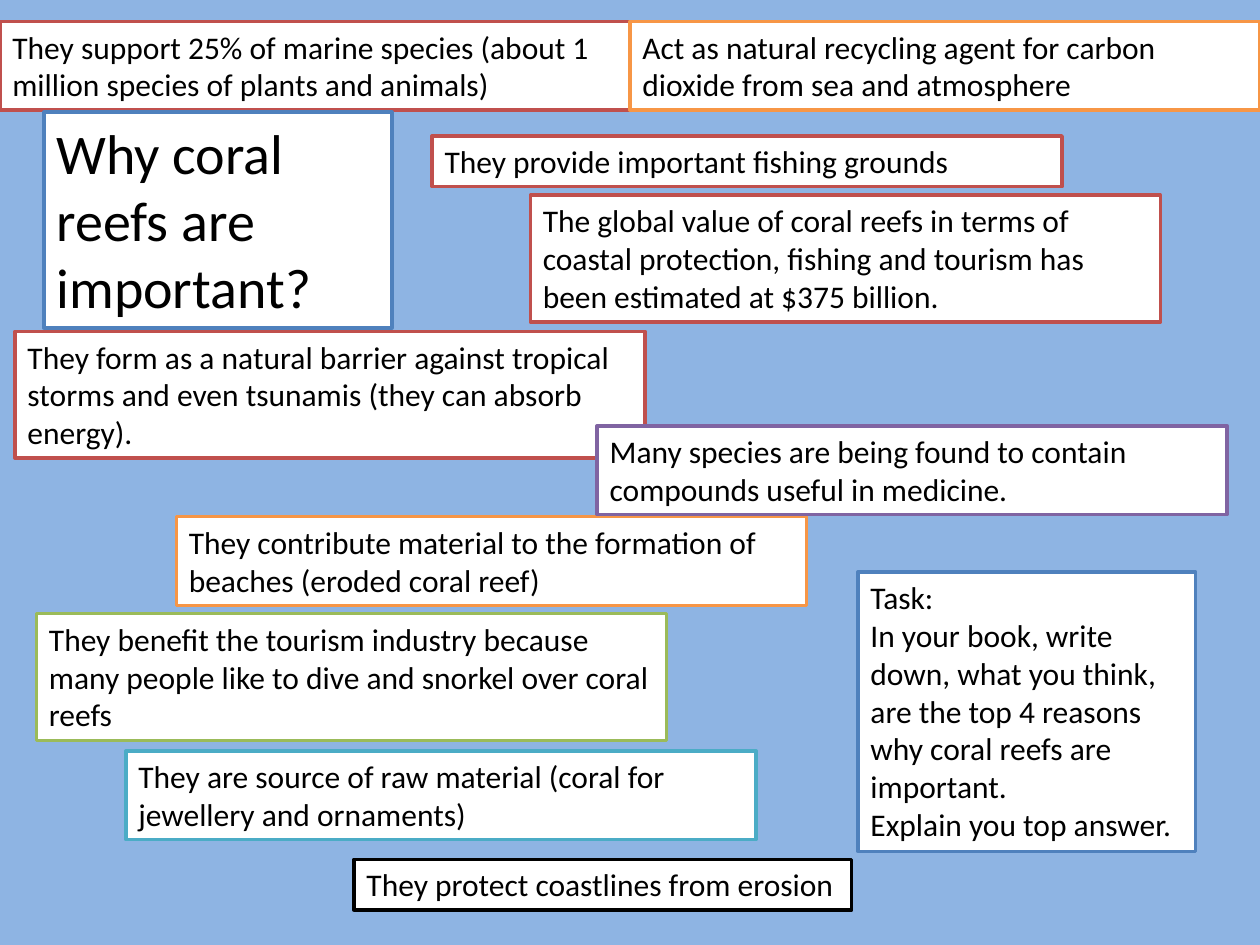
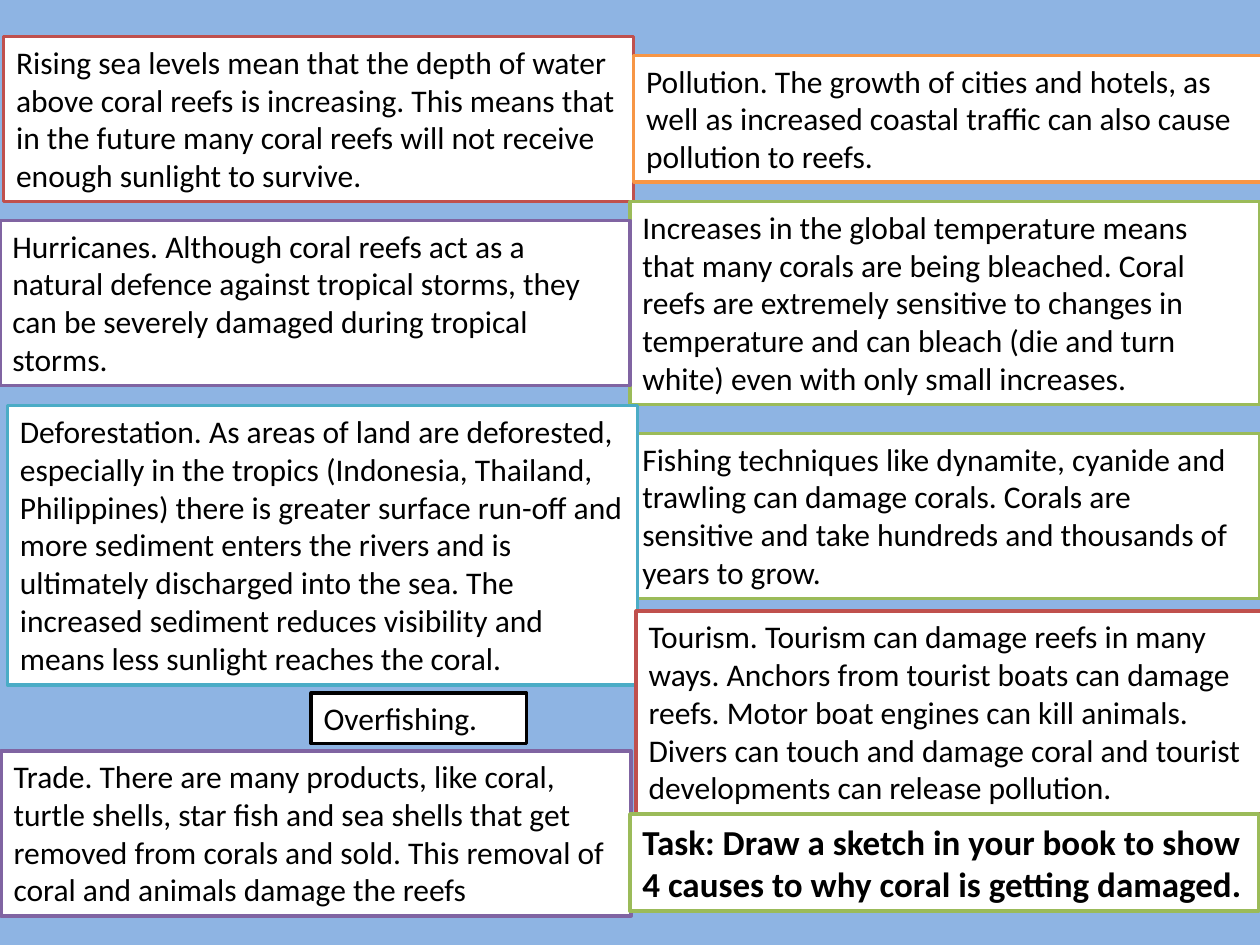
import pptx
import pptx.dml.color
import pptx.enum.shapes
import pptx.enum.text
import pptx.util

Inches = pptx.util.Inches

COLOURS = {
    "sea": "8EB4E3", "white": "FFFFFF", "black": "000000", "red": "C0504D",
    "orange": "F79646", "purple": "8064A2", "green": "9BBB59",
    "aqua": "4BACC6", "blue": "4F81BD",
}
FONT = "Calibri"
CARD_WIDTH = 5
CARD_PADDING = 0.1   # top and bottom insets together
LINE_HEIGHT = 0.0168  # inches per point of font size

# Cards from back to front: left, top, lines of text, border, text, options
IMPORTANCE_CARDS = [
    (3.43, 1.08, 1, "red", "They provide important fishing grounds", {}),
    (0, 0.17, 2, "red",
     "They support 25% of marine species (about 1 million species of plants "
     "and animals)", {}),
    (2.81, 6.82, 1, "black", "They protect coastlines from erosion",
     {"width": 3.95, "wrap": False}),
    (0.12, 2.63, 3, "red",
     "They form as a natural barrier against tropical storms and even "
     "tsunamis (they can absorb energy).", {}),
    (5, 0.17, 2, "orange",
     "Act as natural recycling agent for carbon dioxide from sea and "
     "atmosphere", {}),
    (1.4, 4.1, 2, "orange",
     "They contribute material to the formation of beaches (eroded coral "
     "reef)", {}),
    (1, 5.96, 2, "aqua",
     "They are source of raw material (coral for jewellery and ornaments)", {}),
    (4.74, 3.38, 2, "purple",
     "Many species are being found to contain compounds useful in medicine.",
     {}),
    (0.29, 4.87, 3, "green",
     "They benefit the tourism industry because many people like to dive and "
     "snorkel over coral reefs", {}),
    (4.21, 1.55, 3, "red",
     "The global value of coral reefs in terms of coastal protection, fishing "
     "and tourism has been estimated at $375 billion.", {}),
    (0.35, 0.89, 3, "blue", "Why coral reefs are important?",
     {"width": 2.76, "size": 32}),
    (6.81, 4.54, 7, "blue",
     "Task:\nIn your book, write down, what you think, are the top 4 reasons "
     "why coral reefs are important.\nExplain you top answer.",
     {"width": 2.68}),
]
THREAT_CARDS = [
    (0.03, 0.29, 4, "red",
     "Rising sea levels mean that the depth of water above coral reefs is "
     "increasing. This means that in the future many coral reefs will not "
     "receive enough sunlight to survive.", {}),
    (5, 1.6, 5, "green",
     "Increases in the global temperature means that many corals are being "
     "bleached. Coral reefs are extremely sensitive to changes in temperature "
     "and can bleach (die and turn white) even with only small increases.", {}),
    (0, 1.75, 4, "purple",
     "Hurricanes. Although coral reefs act as a natural defence against "
     "tropical storms, they can be severely damaged during tropical storms.",
     {}),
    (5, 3.44, 4, "green",
     "Fishing techniques like dynamite, cyanide and trawling can damage "
     "corals. Corals are sensitive and take hundreds and thousands of years "
     "to grow.", {}),
    (0.06, 3.22, 7, "aqua",
     "Deforestation. As areas of land are deforested, especially in the "
     "tropics (Indonesia, Thailand, Philippines) there is greater surface "
     "run-off and more sediment enters the rivers and is ultimately "
     "discharged into the sea. The increased sediment reduces visibility and "
     "means less sunlight reaches the coral.", {}),
    (2.47, 5.5, 1, "black", "Overfishing.", {"width": 1.71}),
    (5.03, 0.44, 3, "orange",
     "Pollution. The growth of cities and hotels, as well as increased "
     "coastal traffic can also cause pollution to reefs.", {}),
    (5.05, 4.85, 5, "red",
     "Tourism. Tourism can damage reefs in many ways. Anchors from tourist "
     "boats can damage reefs. Motor boat engines can kill animals. Divers can "
     "touch and damage coral and tourist developments can release pollution.",
     {}),
    (0.01, 5.96, 4, "purple",
     "Trade. There are many products, like coral, turtle shells, star fish "
     "and sea shells that get removed from corals and sold. This removal of "
     "coral and animals damage the reefs", {}),
    (5, 6.46, 2, "green",
     "Task: Draw a sketch in your book to show 4 causes to why coral is "
     "getting damaged.", {"width": 4.99, "size": 20, "bold": True}),
]


def colour(name):
    return pptx.dml.color.RGBColor.from_string(COLOURS[name])


def add_card(slide, left, top, lines, border, text,
             width=CARD_WIDTH, size=18, bold=False, wrap=True):
    height = CARD_PADDING + lines * size * LINE_HEIGHT
    shape = slide.shapes.add_shape(
        pptx.enum.shapes.MSO_SHAPE.RECTANGLE,
        Inches(left), Inches(top), Inches(width), Inches(height))
    shape.shadow.inherit = False
    shape.fill.solid()
    shape.fill.fore_color.rgb = colour("white")
    shape.line.color.rgb = colour(border)
    shape.line.width = pptx.util.Pt(2)

    # Text grows its card downwards from the top edge
    frame = shape.text_frame
    frame.text = text
    frame.word_wrap = wrap
    frame.auto_size = pptx.enum.text.MSO_AUTO_SIZE.SHAPE_TO_FIT_TEXT
    frame.vertical_anchor = pptx.enum.text.MSO_ANCHOR.TOP
    for paragraph in frame.paragraphs:
        paragraph.alignment = pptx.enum.text.PP_ALIGN.LEFT
        paragraph.font.name = FONT
        paragraph.font.size = pptx.util.Pt(size)
        paragraph.font.bold = bold
        paragraph.font.color.rgb = colour("black")


def main():
    presentation = pptx.Presentation()
    presentation.slide_width = Inches(10)
    presentation.slide_height = Inches(7.5)
    for cards in (IMPORTANCE_CARDS, THREAT_CARDS):
        slide = presentation.slides.add_slide(presentation.slide_layouts[6])
        slide.background.fill.solid()
        slide.background.fill.fore_color.rgb = colour("sea")
        for *card, options in cards:
            add_card(slide, *card, **options)
    presentation.save("out.pptx")


if __name__ == "__main__":
    main()
